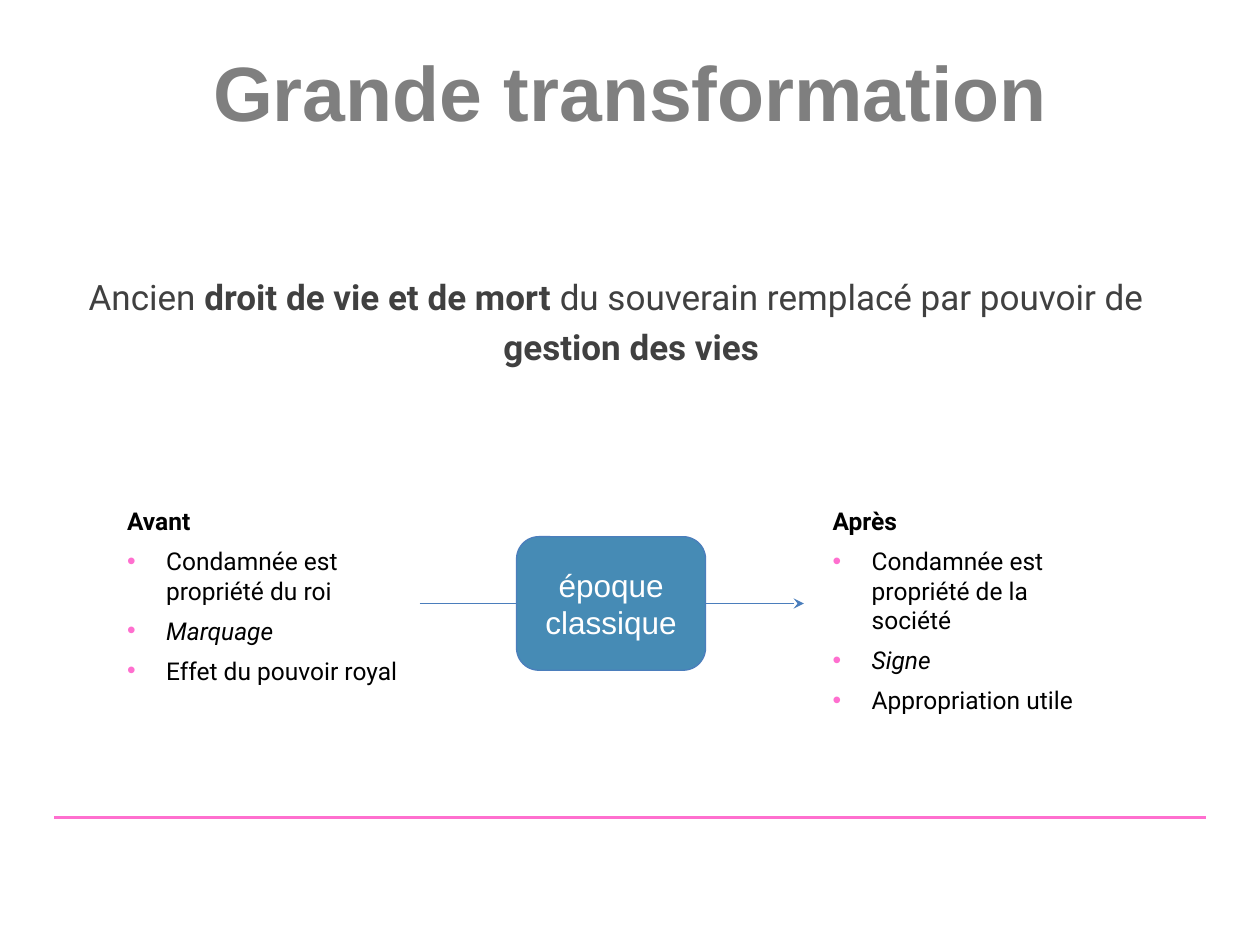
from dataclasses import dataclass

from lxml import etree
from pptx import Presentation
from pptx.dml.color import RGBColor
from pptx.enum import shapes, text
from pptx.oxml import ns
from pptx.util import Inches, Pt


@dataclass(frozen=True)
class Theme:
    head: str = "Arial"
    body: str = "Roboto"
    gray: str = "7F7F7F"
    dark: str = "404040"
    black: str = "000000"
    white: str = "FFFFFF"
    pink: str = "FF6FCF"
    blue: str = "468BB5"
    edge: str = "4B7EBC"
    title: int = 44
    lead: int = 20
    label: int = 18
    item: int = 14


def color(code):
    return RGBColor.from_string(code)


def add(parent, tag, **attrs):
    return etree.SubElement(parent, ns.qn(tag), attrs)


def write(para, runs, *, font, size, ink, align=text.PP_ALIGN.LEFT,
          indent=0, bullet=None, after=0, line=None):
    """Fill a paragraph with (words, style) runs; style holds b and/or i."""
    props = para._p.get_or_add_pPr()
    props.set("marL", str(Inches(indent)))
    props.set("indent", str(-Inches(indent)))
    if bullet:
        add(add(props, "a:buClr"), "a:srgbClr", val=bullet)
        add(props, "a:buFont", typeface="Arial")
        add(props, "a:buChar", char="•")
    else:
        add(props, "a:buNone")
    para.alignment = align
    para.space_before, para.space_after = Pt(0), Pt(after)
    if line:
        para.line_spacing = line
    for words, style in runs:
        run = para.add_run()
        run.text = words
        face = run.font
        face.name, face.size = font, Pt(size)
        face.bold, face.italic = "b" in style, "i" in style
        face.color.rgb = color(ink)


class Page:
    def __init__(self, deck, theme):
        self.theme = theme
        self.slide = deck.slides.add_slide(deck.slide_layouts[1])

    def place(self, index, box, runs, **form):
        """Move and fill a placeholder of the layout."""
        shape = self.slide.placeholders[index]
        shape.left, shape.top, shape.width, shape.height = map(Inches, box)
        frame = shape.text_frame
        frame.auto_size = text.MSO_AUTO_SIZE.NONE
        write(frame.paragraphs[0], runs, align=text.PP_ALIGN.CENTER, **form)
        return frame

    def title(self, words):
        t = self.theme
        frame = self.place(0, (1.56, 0.3, 6.89, 0.84), [(words, "b")],
                           font=t.head, size=t.title, ink=t.gray)
        frame.word_wrap = False
        frame.auto_size = text.MSO_AUTO_SIZE.SHAPE_TO_FIT_TEXT

    def lead(self, runs):
        t = self.theme
        frame = self.place(1, (0.39, 2.07, 9, 1.1), runs, font=t.body,
                           size=t.lead, ink=t.dark, indent=0.24, line=1.2)
        frame.vertical_anchor = text.MSO_ANCHOR.TOP

    def column(self, left, head, items):
        t = self.theme
        box = self.slide.shapes.add_textbox(
            *map(Inches, (left, 3.97, 2.42, 1.65)))
        frame = box.text_frame
        frame.word_wrap = True
        form = dict(font=t.body, size=t.item, ink=t.black, after=6)
        write(frame.paragraphs[0], [(head, "b")], indent=0.24, **form)
        for item in items:
            write(frame.add_paragraph(), [item], indent=0.31,
                  bullet=t.pink, **form)

    def line(self, left, right, y, ink, width, arrow=False):
        link = self.slide.shapes.add_connector(
            shapes.MSO_CONNECTOR.STRAIGHT,
            *map(Inches, (left, y, right, y)))
        link.line.color.rgb = color(ink)
        link.line.width = Pt(width)
        if arrow:
            add(link.line._get_or_add_ln(), "a:tailEnd", type="stealth")
        add(link._element.spPr, "a:effectLst")

    def card(self, box, words):
        t = self.theme
        shape = self.slide.shapes.add_shape(
            shapes.MSO_SHAPE.ROUNDED_RECTANGLE, *map(Inches, box))
        shape.shadow.inherit = False
        shape.fill.solid()
        shape.fill.fore_color.rgb = color(t.blue)
        shape.line.color.rgb = color(t.edge)
        shape.line.width = Pt(0.75)
        frame = shape.text_frame
        frame.word_wrap = True
        frame.vertical_anchor = text.MSO_ANCHOR.MIDDLE
        write(frame.paragraphs[0], [(words, "")], font=t.head, size=t.label,
              ink=t.white, align=text.PP_ALIGN.CENTER)


def main():
    deck = Presentation()
    deck.slide_width, deck.slide_height = Inches(10), Inches(7.5)
    theme = Theme()
    page = Page(deck, theme)
    page.line(0.43, 9.57, 6.49, theme.pink, 2)
    page.title("Grande transformation")
    page.lead([("Ancien ", ""), ("droit de vie et de mort ", "b"),
               ("du souverain remplacé par pouvoir de ", ""),
               ("gestion des vies", "b")])
    page.column(0.91, "Avant", [("Condamnée est propriété du roi", ""),
                                ("Marquage", "i"),
                                ("Effet du pouvoir royal", "")])
    page.column(6.51, "Après", [("Condamnée est propriété de la société", ""),
                                ("Signe", "i"),
                                ("Appropriation utile", "")])
    page.line(3.33, 6.38, 4.79, theme.edge, 0.75, arrow=True)
    page.card((4.1, 4.26, 1.5, 1.06), "époque classique")
    deck.save("out.pptx")


if __name__ == "__main__":
    main()
